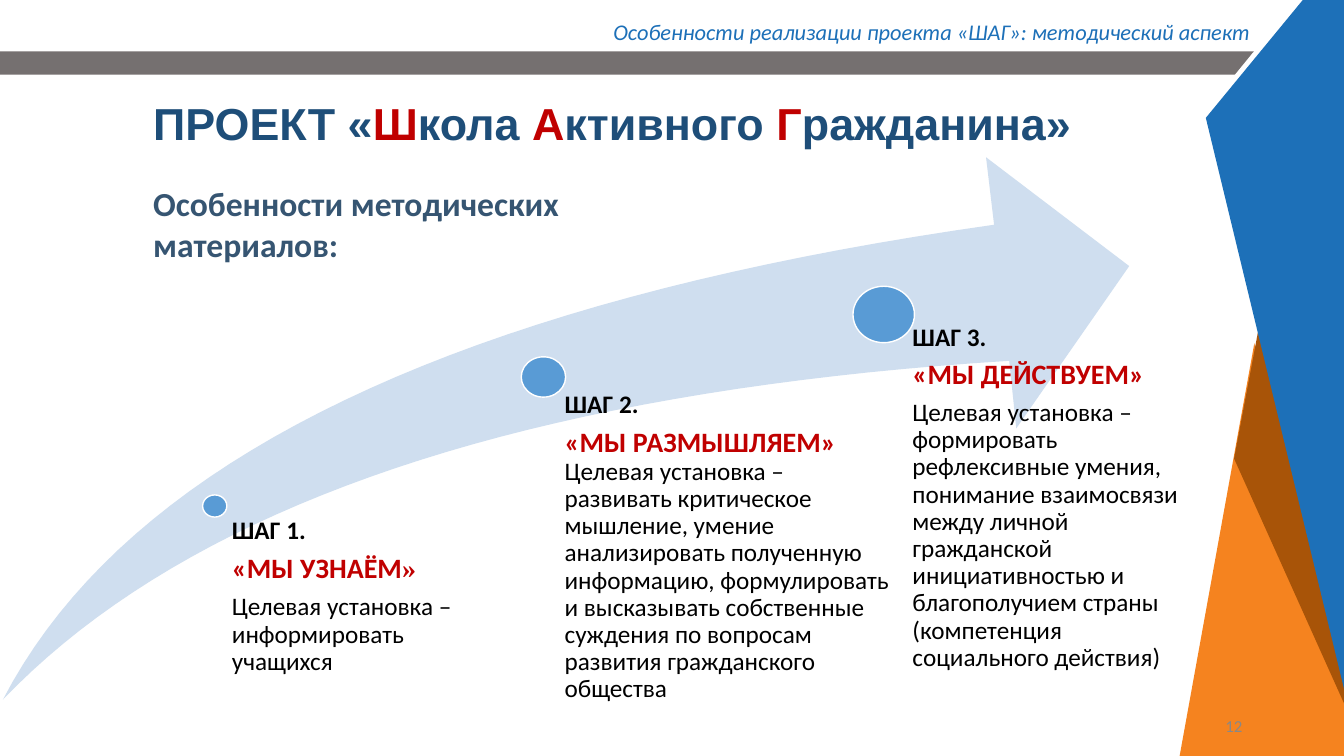
from pptx import Presentation
from pptx import util as u
from pptx.dml.color import RGBColor
from pptx.enum import shapes, text

HUES = {"blue": "1D70B8", "gray": "757070", "orange": "F5831F", "brown": "A85408",
        "white": "FFFFFF", "navy": "1E4E79", "red": "C00000", "slate": "365572",
        "pale": "CFDEEF", "dot": "599BD5", "black": "000000", "dim": "888888"}

deck = Presentation()
deck.slide_width, deck.slide_height = u.Inches(13.33), u.Inches(7.5)
slide = deck.slides.add_slide(deck.slide_layouts[6])


def draw(points, hue):
    spots = [(u.Inches(x), u.Inches(y)) for x, y in points]
    pen = slide.shapes.build_freeform(*spots[0], scale=1.0)
    pen.add_line_segments(spots[1:], close=True)
    form = pen.convert_to_shape()
    form.shadow.inherit = False
    form.fill.solid()
    form.fill.fore_color.rgb = RGBColor.from_string(HUES[hue])
    form.line.fill.background()


def write(place, paras, inset=(0.1, 0.05, 0.1, 0.05), anchor="TOP"):
    frame = slide.shapes.add_textbox(*map(u.Inches, place)).text_frame
    sides = ("left", "top", "right", "bottom")
    look = {f"margin_{side}": u.Inches(gap) for side, gap in zip(sides, inset)}
    look |= {"word_wrap": True, "vertical_anchor": getattr(text.MSO_ANCHOR, anchor)}
    for key, value in look.items():
        setattr(frame, key, value)
    for i, (style, runs) in enumerate(paras):
        para = frame.add_paragraph() if i else frame.paragraphs[0]
        for key, value in style.items():
            setattr(para, key, value)
        for words, hue, font in runs:
            run = para.add_run()
            run.text = words
            run.font.color.rgb = RGBColor.from_string(HUES[hue])
            for key, value in ({"name": "Calibri"} | font).items():
                setattr(run.font, key, value)


right = {"alignment": text.PP_ALIGN.RIGHT}
tight = {"line_spacing": 0.9}

draw([(0, 0.51), (12.96, 0.51), (12.7, 0.74), (0, 0.74)], "gray")
write((1.55, 0.13, 10.95, 0.37), [(right, [
    ("Особенности реализации проекта «ШАГ»: методический аспект", "blue",
     {"size": u.Pt(16), "italic": True})])])

draw([(13.09, -0.18), (13.53, -0.18), (13.53, 7.5), (11.7, 7.5)], "orange")
draw([(13.53, -0.18), (13.53, 7.45), (13.42, 7.45), (11.9, 1.17), (13, -0.18)], "white")
draw([(12.96, 6.11), (13.59, 6.11), (13.59, 7.5), (12.96, 7.5)], "orange")
draw([(12.24, 4.55), (12.61, 2.59), (13.74, 7.89)], "brown")
draw([(13.53, -0.18), (13.53, 7.45), (13.48, 7.45), (11.96, 1.17), (13.07, -0.18)], "blue")

big = {"name": "Arial", "size": u.Pt(32), "bold": True}
title = [("ПРОЕКТ «", "navy"), ("Ш", "red"), ("кола ", "navy"), ("А", "red"),
         ("ктивного ", "navy"), ("Г", "red"), ("ражданина»", "navy")]
write((1.42, 0.74, 10.45, 1.02),
      [(tight, [(words, hue, big) for words, hue in title])], anchor="MIDDLE")
write((1.42, 1.77, 5.84, 0.91), [({}, [
    ("Особенности методических материалов:", "slate", {"size": u.Pt(24), "bold": True})])])

upper = [(0.03, 6.94), (1.27, 4.55), (4.55, 2.98), (9.86, 2.23)]
lower = [(10.01, 3.58), (5.22, 3.88), (1.89, 5), (0.03, 6.94)]
curves = []
for curve in (upper, lower):
    trace = []
    for n in range(41):
        t = n / 40
        parts = ((1 - t) ** 3, 3 * t * (1 - t) ** 2, 3 * t ** 2 * (1 - t), t ** 3)
        trace.append([sum(k * spot[axis] for k, spot in zip(parts, curve)) for axis in (0, 1)])
    curves.append(trace)
draw(curves[0] + [(9.78, 1.56), (11.2, 2.64), (10.08, 4.25)] + curves[1][:-1], "pale")

head = {"size": u.Pt(18), "bold": True}
name = {"size": u.Pt(20), "bold": True}
body = {"size": u.Pt(18), "bold": False}
near = tight | {"space_before": u.Pt(6.3)}
far = tight | {"space_before": u.Pt(7)}

steps = [
    ((2.01, 4.91, 0.24, 0.22), (2.18, 5.14, 2.59, 1.55), 0.12, [
        (near, [("«МЫ УЗНАЁМ", "red", name),
                ("»", "red", name | {"name": "Times New Roman"})]),
        (far, [("Целевая установка – информировать учащихся", "black", body)])]),
    ((5.17, 3.54, 0.44, 0.4), (5.38, 3.89, 3.48, 2.93), 0.22, [
        (near, [("«МЫ РАЗМЫШЛЯЕМ» ", "red", name),
                ("Целевая установка – развивать критическое мышление, умение "
                 "анализировать полученную информацию, формулировать и высказывать "
                 "собственные суждения по вопросам развития гражданского общества",
                 "black", body)])]),
    ((8.46, 2.84, 0.61, 0.56), (8.74, 3.22, 3.13, 3.74), 0.31, [
        (near, [("«МЫ ДЕЙСТВУЕМ»", "red", name)]),
        (near, [("Целевая установка – формировать рефлексивные умения, понимание "
                 "взаимосвязи между личной гражданской инициативностью и благополучием "
                 "страны (компетенция социального действия)", "black", body)])]),
]
for num, (spot, place, inset, paras) in enumerate(steps, 1):
    dot = slide.shapes.add_shape(shapes.MSO_SHAPE.OVAL, *map(u.Inches, spot))
    dot.shadow.inherit = False
    dot.fill.solid()
    dot.fill.fore_color.rgb = RGBColor.from_string(HUES["dot"])
    dot.line.color.rgb = RGBColor.from_string(HUES["white"])
    dot.line.width = u.Pt(1)
    write(place, [(tight, [(f"ШАГ {num}.", "black", head)])] + paras, (inset, 0, 0, 0))

write((9.42, 7, 3, 0.4), [(right, [("12", "dim", {"size": u.Pt(12)})])], anchor="MIDDLE")

deck.save("out.pptx")
